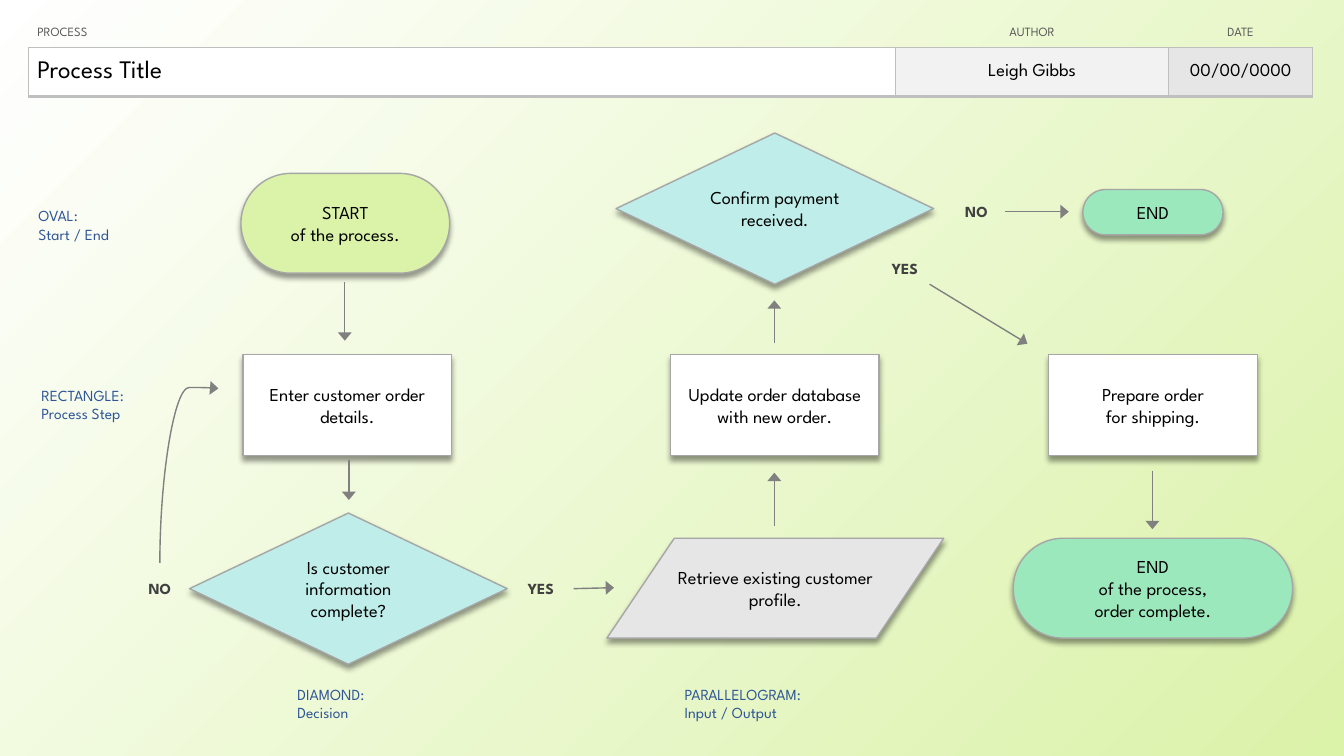
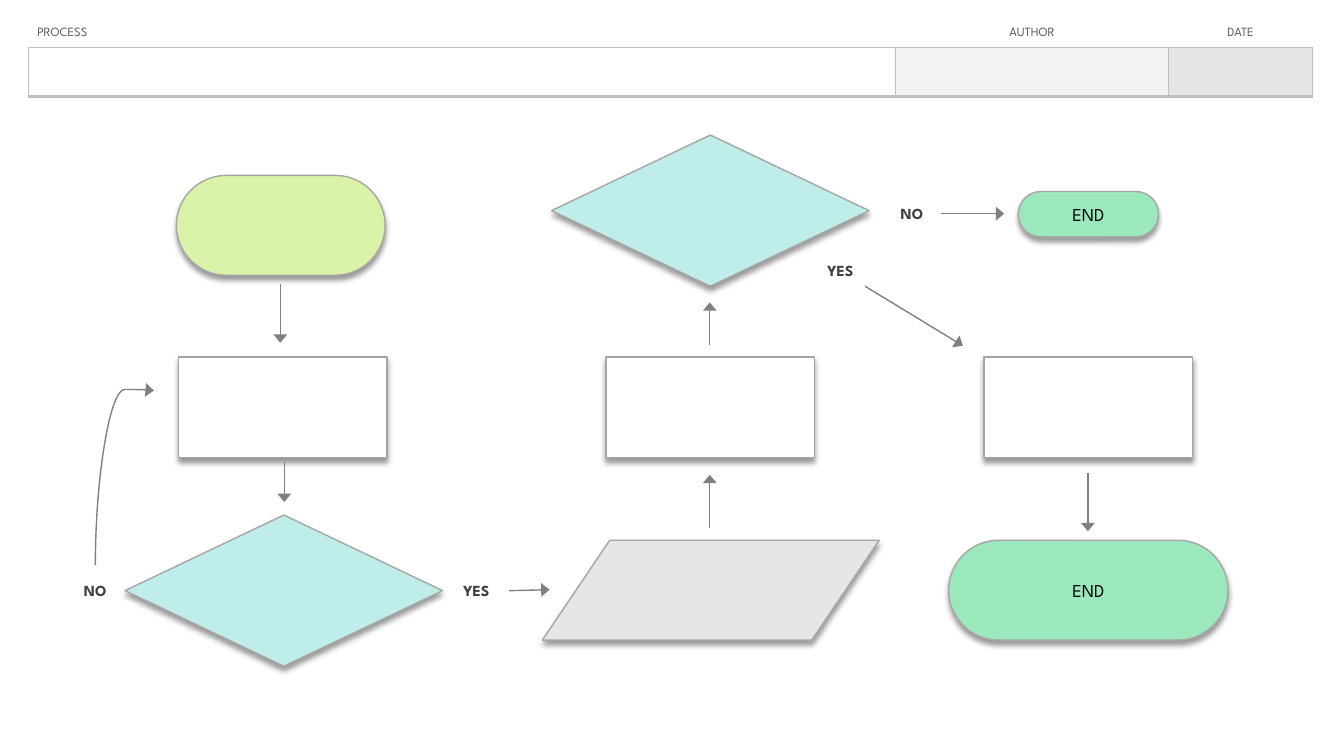
from lxml import etree
from pptx import Presentation
from pptx import util as u
from pptx.dml.color import RGBColor
from pptx.enum import shapes, text
from pptx.oxml.ns import qn

PX = 9144  # EMU in one px, 100 px to the inch
FONT = "League Spartan"
BLACK, WHITE, HEADING, ANSWER, LEGEND = "000000", "FFFFFF", "595959", "404040", "2F5597"
LIME, GREEN, AQUA, GREY = "DBF2A9", "9CE8BD", "BFEEEA", "E7E6E6"
OUTLINE, ARROW, BORDER = "A6A6A6", "808080", "BFBFBF"
LEFT, CENTER = text.PP_ALIGN.LEFT, text.PP_ALIGN.CENTER

PILL = shapes.MSO_SHAPE.ROUNDED_RECTANGLE
STEP = shapes.MSO_SHAPE.FLOWCHART_PROCESS
DATA = shapes.MSO_SHAPE.FLOWCHART_DATA
DECISION = shapes.MSO_SHAPE.FLOWCHART_DECISION

# Flowchart: name -> preset shape, fill, left, top, width, height
NODES = {
    "start": (PILL, LIME, 239, 172, 207, 99),
    "enter": (STEP, WHITE, 241, 352, 207, 100),
    "complete": (DECISION, AQUA, 188, 509, 315, 150),
    "retrieve": (DATA, GREY, 602, 534, 334, 99),
    "update": (STEP, WHITE, 665, 352, 207, 100),
    "confirm": (DECISION, AQUA, 611, 132, 315, 150),
    "rejected": (PILL, GREEN, 1074, 188, 139, 45),
    "prepare": (STEP, WHITE, 1040, 352, 207, 100),
    "finish": (PILL, GREEN, 1005, 534, 277, 99),
}
# Arrows: begin x, begin y, end x, end y
ARROWS = [
    (342, 280, 342, 338), (346, 456, 346, 496), (569, 584, 609, 583),
    (768, 522, 768, 469), (768, 340, 768, 298), (922, 282, 1019, 341),
    (997, 210, 1060, 210), (1143, 467, 1143, 525),
]
# Answers beside the decisions: wording, left, top
ANSWERS = [("NO", 119, 559), ("YES", 497, 559), ("YES", 858, 241), ("NO", 929, 185)]
# Legend: lines, left, top, width
LEGENDS = [
    (["OVAL:", "Start / End"], 36, 198, 173),
    (["RECTANGLE:", "Process Step"], 39, 376, 138),
    (["DIAMOND:", "Decision"], 293, 673, 116),
    (["PARALLELOGRAM:", "Input / Output"], 677, 673, 184),
]
EXAMPLE = {
    "start": ["START", "of the process."],
    "enter": ["Enter customer order details."],
    "complete": ["Is customer information complete?"],
    "retrieve": ["Retrieve existing customer profile."],
    "update": ["Update order database with new order."],
    "confirm": ["Confirm payment received."],
    "rejected": ["END"],
    "prepare": ["Prepare order", "for shipping."],
    "finish": ["END", "of the process,", "order complete."],
}
BLANK = {"rejected": ["END"], "finish": ["END"]}


def px(length):
    return u.Emu(length * PX)


def rgb(color):
    return RGBColor.from_string(color)


def sub(parent, tag, **attributes):
    return etree.SubElement(parent, qn(tag), attributes)


def write(frame, lines, size, color, align=CENTER, bold=False):
    """Fill a text frame with one paragraph per line."""
    for index, line in enumerate(lines):
        paragraph = frame.add_paragraph() if index else frame.paragraphs[0]
        paragraph.alignment = align
        run = paragraph.add_run()
        run.text = line
        run.font.name, run.font.size, run.font.bold = FONT, u.Pt(size), bold
        run.font.color.rgb = rgb(color)


def set_frame(frame, margin):
    frame.word_wrap = True
    frame.vertical_anchor = text.MSO_ANCHOR.MIDDLE
    frame.margin_left = frame.margin_right = px(margin)
    frame.margin_top = frame.margin_bottom = px(margin)


def add_label(slide, lines, left, top, width, size, color, **style):
    box = slide.shapes.add_textbox(px(left), px(top), px(width), px(50))
    set_frame(box.text_frame, 2)
    write(box.text_frame, lines, size, color, **style)


def add_node(slide, preset, fill, left, top, width, height, lines):
    shape = slide.shapes.add_shape(preset, px(left), px(top), px(width), px(height))
    if preset == PILL:
        shape.adjustments[0] = 0.5
    shape.fill.solid()
    shape.fill.fore_color.rgb = rgb(fill)
    shape.line.color.rgb = rgb(OUTLINE)
    shape.line.width = u.Pt(1)
    # Soft shadow straight below
    shape.shadow.inherit = False
    effects = shape.element.spPr.find(qn("a:effectLst"))
    shadow = sub(effects, "a:outerShdw", blurRad=str(u.Pt(4)), dist=str(u.Pt(3)),
                 dir="5400000", algn="t", rotWithShape="0")
    sub(sub(shadow, "a:srgbClr", val=BLACK), "a:alpha", val="40000")
    set_frame(shape.text_frame, 0 if preset == DECISION else 2)
    write(shape.text_frame, lines, 13, BLACK)


def add_arrow(slide, x1, y1, x2, y2, kind=shapes.MSO_CONNECTOR.STRAIGHT):
    arrow = slide.shapes.add_connector(kind, px(x1), px(y1), px(x2), px(y2))
    arrow.line.color.rgb = rgb(ARROW)
    arrow.line.width = u.Pt(1)
    sub(arrow.get_or_add_ln(), "a:tailEnd", type="triangle", w="lg", len="med")
    sub(arrow.element.spPr, "a:effectLst")
    return arrow


def add_return_arrow(slide, dx, dy):
    """Curve that climbs from NO back to the first step."""
    arrow = add_arrow(slide, 274 + dx, 501 + dy, 101 + dx, 443 + dy,
                      shapes.MSO_CONNECTOR.CURVE)
    arrow.rotation = 90
    guides = arrow.element.spPr.find(".//" + qn("a:avLst"))
    sub(guides, "a:gd", name="adj1", fmla="val 100600")


def set_borders(cell, widths):
    """Set left, right, top and bottom borders in points; 0 is none."""
    properties = cell._tc.get_or_add_tcPr()
    for index, (side, width) in enumerate(zip("LRTB", widths)):
        line = etree.Element(qn("a:ln" + side), w=str(u.Pt(width)))
        if width:
            sub(sub(line, "a:solidFill"), "a:srgbClr", val=BORDER)
        else:
            sub(line, "a:noFill")
        properties.insert(index, line)


def add_header(slide, values):
    """Table with process, author and date."""
    table = slide.shapes.add_table(2, 3, px(28), px(19), px(1274), px(77)).table
    table.first_row = table.horz_banding = False
    for row, height in zip(table.rows, (28, 49)):
        row.height = px(height)
    columns = zip(("PROCESS", "AUTHOR", "DATE"), values, (860, 271, 143),
                  (WHITE, "F2F2F2", "E6E6E6"), (18, 13, 13))
    for index, (heading, value, width, fill, size) in enumerate(columns):
        table.columns[index].width = px(width)
        align, indent = (CENTER, 1) if index else (LEFT, 9)
        top, bottom = table.cell(0, index), table.cell(1, index)
        for cell in (top, bottom):
            cell.vertical_anchor = text.MSO_ANCHOR.MIDDLE
            cell.margin_left = px(indent)
            cell.margin_right = cell.margin_top = px(1)
            cell.margin_bottom = 0
        top.fill.background()
        set_borders(top, (0, 0, 0, 1))
        write(top.text_frame, [heading], 9, HEADING, align)
        bottom.fill.solid()
        bottom.fill.fore_color.rgb = rgb(fill)
        set_borders(bottom, (1, 1, 1, 2.25))
        if value:
            write(bottom.text_frame, [value], size, BLACK, align)


def add_flowchart(slide, wording, dx=0, dy=0):
    for name, (preset, fill, left, top, width, height) in NODES.items():
        add_node(slide, preset, fill, left + dx, top + dy, width, height,
                 wording.get(name, []))
    for x1, y1, x2, y2 in ARROWS:
        add_arrow(slide, x1 + dx, y1 + dy, x2 + dx, y2 + dy)
    add_return_arrow(slide, dx, dy)
    for answer, left, top in ANSWERS:
        add_label(slide, [answer], left + dx, top + dy, 79, 11, ANSWER, bold=True)


def set_gradient(slide):
    fill = slide.background.fill
    fill.gradient()
    fill.gradient_angle = 315
    for stop, color, position in zip(fill.gradient_stops, (WHITE, LIME), (0, 1)):
        stop.color.rgb = rgb(color)
        stop.position = position


def main():
    presentation = Presentation()
    presentation.slide_width = u.Inches(13.33)
    presentation.slide_height = u.Inches(7.5)
    blank_layout = presentation.slide_layouts[6]

    # Worked example with legend
    slide = presentation.slides.add_slide(blank_layout)
    set_gradient(slide)
    add_header(slide, ("Process Title", "Leigh Gibbs", "00/00/0000"))
    add_flowchart(slide, EXAMPLE)
    for lines, left, top, width in LEGENDS:
        add_label(slide, lines, left, top, width, 11, LEGEND, align=LEFT)

    # Empty form
    slide = presentation.slides.add_slide(blank_layout)
    add_header(slide, ("", "", ""))
    add_flowchart(slide, BLANK, dx=-64, dy=2)

    presentation.save("out.pptx")


if __name__ == "__main__":
    main()
